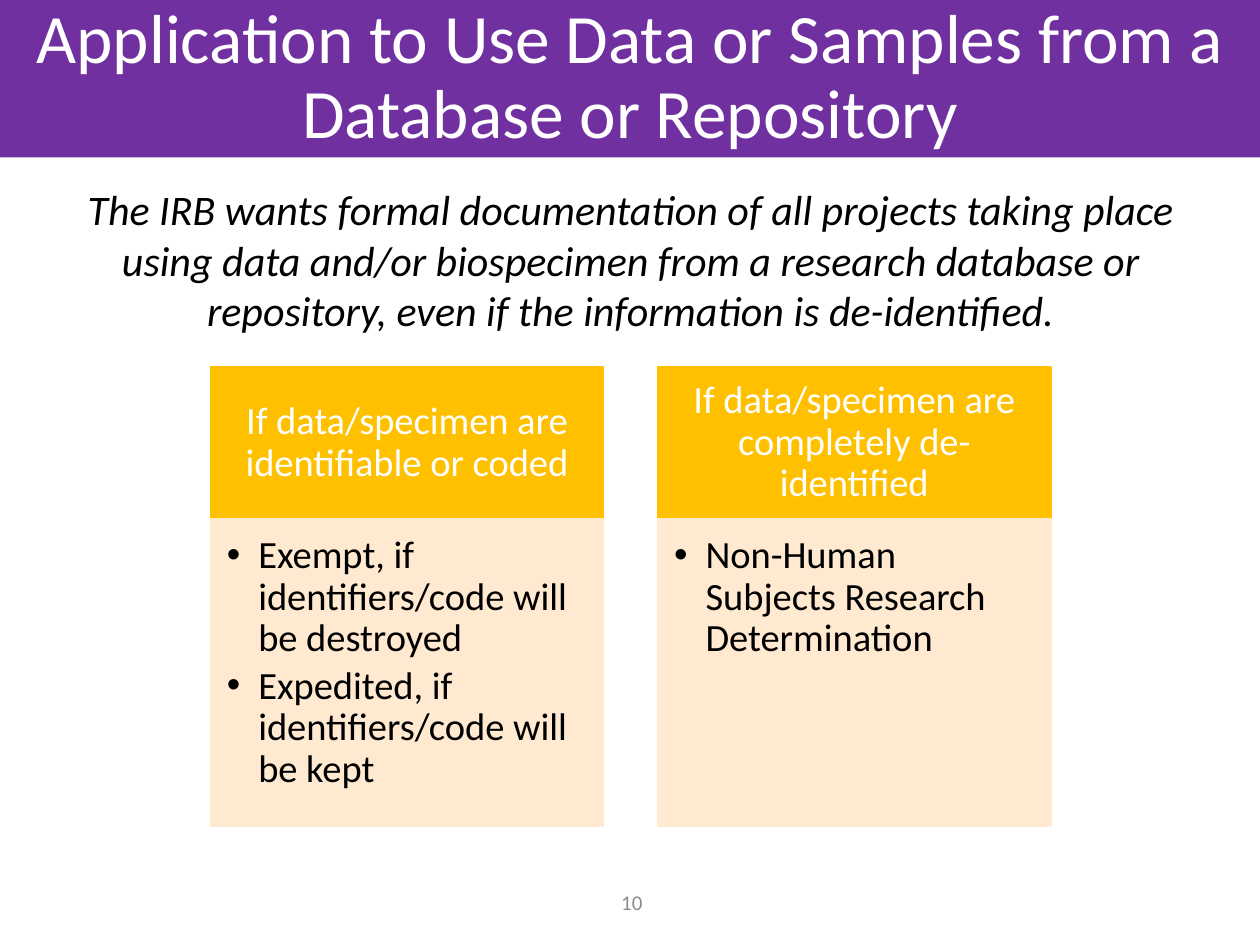
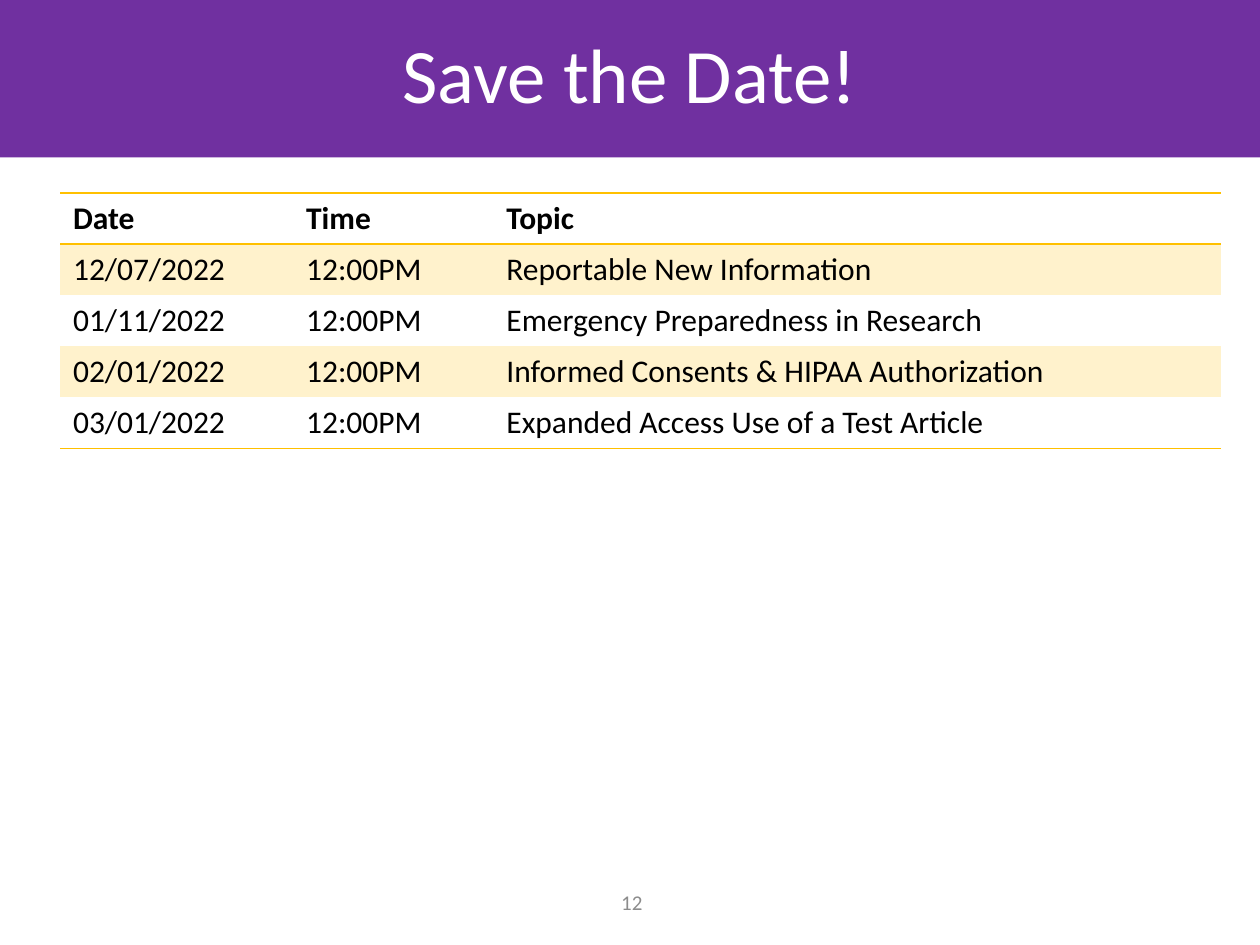
from pptx import Presentation
from pptx.dml.color import RGBColor as RGB
from pptx.enum.text import MSO_ANCHOR as ANCHOR, MSO_AUTO_SIZE as AUTO, PP_ALIGN as ALIGN
from pptx.oxml import parse_xml
from pptx.oxml.ns import nsdecls, qn
from pptx.util import Inches, Pt

COLORS = {
    "band": "7030A0",
    "accent": "FFC000",
    "card": "FFEAD1",
    "stripe": "FFF2CC",
    "white": "FFFFFF",
    "black": "000000",
    "footer": "8C8C8C",
}
NO_STYLE = "{2D5ABB26-0587-4C30-8999-92F81FD0307C}"


def write(tf, *texts, size=18, color="black", bold=False, italic=False, align=ALIGN.LEFT,
          anchor=ANCHOR.TOP, spacing=1.0, after=0, hang=0, insets=(0.1, 0.05, 0.1, 0.05)):
    """Fill a text frame, one paragraph per text; insets run left, top, right, bottom."""
    tf.word_wrap = True
    tf.auto_size = AUTO.NONE
    tf.vertical_anchor = anchor
    tf.margin_left, tf.margin_top, tf.margin_right, tf.margin_bottom = map(Inches, insets)
    for i, text in enumerate(texts):
        p = tf.add_paragraph() if i else tf.paragraphs[0]
        p.alignment = align
        p.line_spacing = spacing
        p.space_before, p.space_after = Pt(0), Pt(after)
        if hang:
            pPr = p._p.get_or_add_pPr()
            pPr.set("marL", str(Inches(hang)))
            pPr.set("indent", str(-Inches(hang)))
        r = p.add_run()
        r.text = text
        r.font.name, r.font.size = "Calibri", Pt(size)
        r.font.bold, r.font.italic = bold, italic
        r.font.color.rgb = RGB.from_string(COLORS[color])


def paint(sp, color, left, top, width, height, line=False):
    sp.left, sp.top, sp.width, sp.height = map(Inches, (left, top, width, height))
    sp.fill.solid()
    sp.fill.fore_color.rgb = RGB.from_string(COLORS[color])
    if line:
        sp.line.color.rgb = RGB.from_string(COLORS[color])
        sp.line.width = Pt(1)


prs = Presentation()
prs.slide_width, prs.slide_height = Inches(10), Inches(7.5)
COMPARISON, TITLE_ONLY = prs.slide_layouts[4], prs.slide_layouts[5]

# Title band and page number on every slide
slides = []
for layout, title, size, number in (
    (COMPARISON, "Application to Use Data or Samples from a Database or Repository", 39.6, "10"),
    (TITLE_ONLY, "Save the Date!", 44, "12"),
):
    slide = prs.slides.add_slide(layout)
    paint(slide.shapes.title, "band", 0, 0, 10, 1.25)
    write(slide.shapes.title.text_frame, title, size=size, color="white",
          align=ALIGN.CENTER, anchor=ANCHOR.MIDDLE, spacing=0.9)
    page = slide.shapes.add_textbox(Inches(4.68), Inches(6.96), Inches(0.67), Inches(0.4))
    write(page.text_frame, number, size=12, color="footer",
          align=ALIGN.CENTER, anchor=ANCHOR.MIDDLE)
    slides.append(slide)
application, save_the_date = slides

# Application: introduction and two cards
intro = application.shapes.add_textbox(Inches(0.59), Inches(1.41), Inches(8.83), Inches(1.31))
write(intro.text_frame,
      "The IRB wants formal documentation of all projects taking place using data and/or "
      "biospecimen from a research database or repository, even if the information is "
      "de-identified.",
      size=24, italic=True, align=ALIGN.CENTER, after=12)

cards = [
    ("If data/specimen are identifiable or coded",
     ["Exempt, if identifiers/code will be destroyed",
      "Expedited, if identifiers/code will be kept"]),
    ("If data/specimen are completely de-identified",
     ["Non-Human Subjects Research Determination"]),
]
holders = {ph.placeholder_format.idx: ph for ph in application.placeholders}
for i, (heading, items) in enumerate(cards):
    left = 1.67 + i * 3.55
    head, body = holders[2 * i + 1], holders[2 * i + 2]
    paint(head, "accent", left, 2.91, 3.12, 1.21, line=True)
    write(head.text_frame, heading, size=22, color="white", align=ALIGN.CENTER,
          anchor=ANCHOR.MIDDLE, spacing=0.9, after=7.7, insets=(0.17, 0.1, 0.17, 0.1))
    paint(body, "card", left, 4.12, 3.12, 2.44, line=True)
    write(body.text_frame, *items, size=22, spacing=0.9, after=3.3, hang=0.25,
          insets=(0.13, 0.13, 0.17, 0.19))

# Save the date: schedule table
schedule = [
    ("Date", "Time", "Topic"),
    ("12/07/2022", "12:00PM", "Reportable New Information"),
    ("01/11/2022", "12:00PM", "Emergency Preparedness in Research"),
    ("02/01/2022", "12:00PM", "Informed Consents & HIPAA Authorization"),
    ("03/01/2022", "12:00PM", "Expanded Access Use of a Test Article"),
]
ruled_sides = {0: ("lnT", "lnB"), len(schedule) - 1: ("lnB",)}
table = save_the_date.shapes.add_table(
    len(schedule), 3, Inches(0.48), Inches(1.53), Inches(9.21), Inches(2.03)).table
table._tbl.tblPr.find(qn("a:tableStyleId")).text = NO_STYLE
for column, width in zip(table.columns, (1.85, 1.59, 5.77)):
    column.width = Inches(width)
for r, row in enumerate(schedule):
    for c, text in enumerate(row):
        cell = table.cell(r, c)
        write(cell.text_frame, text, bold=r == 0)
        tcPr = cell._tc.get_or_add_tcPr()
        for side in ruled_sides.get(r, ()):
            tcPr.append(parse_xml(
                f'<a:{side} {nsdecls("a")} w="{Pt(1)}"><a:solidFill>'
                f'<a:srgbClr val="{COLORS["accent"]}"/></a:solidFill></a:{side}>'))
        if r % 2:
            cell.fill.solid()
            cell.fill.fore_color.rgb = RGB.from_string(COLORS["stripe"])
        else:
            cell.fill.background()

prs.save("out.pptx")
